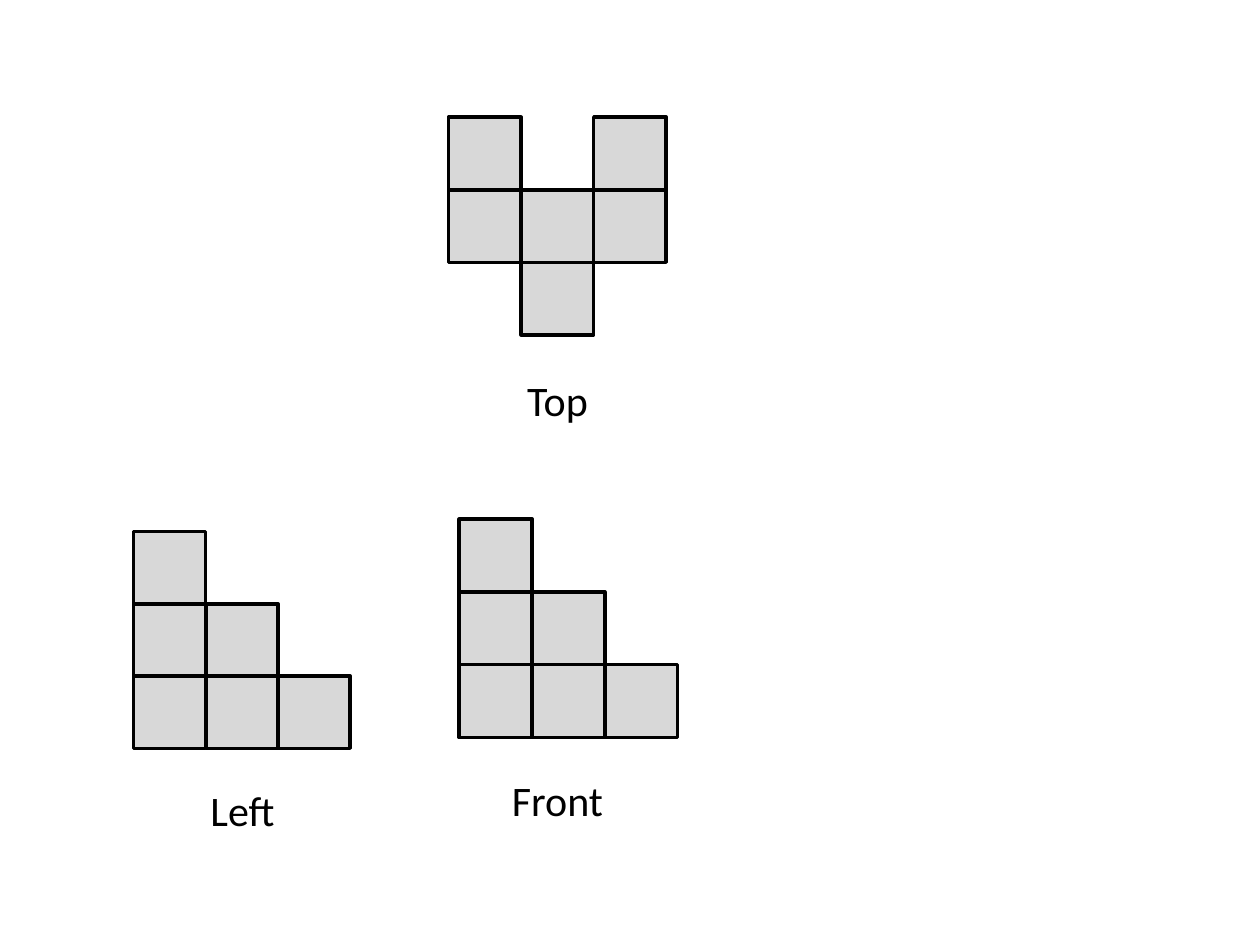
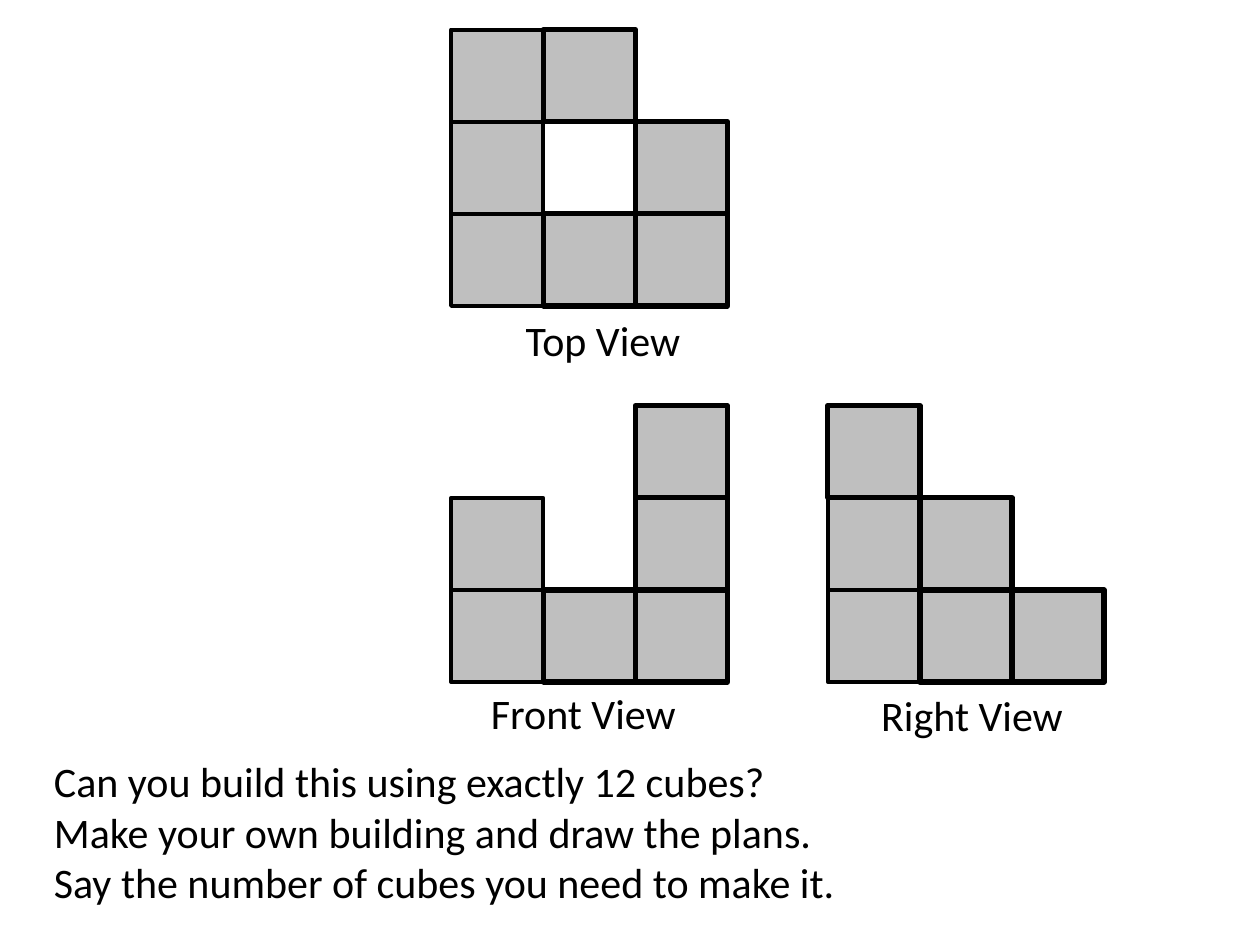
from dataclasses import dataclass

from pptx import Presentation
from pptx import util as u
from pptx.dml.color import RGBColor
from pptx.enum import shapes, text

COLUMNS, ROWS = 100, 75
BLANK_LAYOUT = 6


@dataclass(frozen=True)
class Theme:
    ink: str = "000000"
    pale_cube: str = "D8D8D8"
    grey_cube: str = "BFBFBF"
    font: str = "Calibri"
    size: float = 24
    fine: float = 2
    thin: float = 2.25
    thick: float = 3


class Plans:
    """Draws cube plans on a slide grid of COLUMNS by ROWS."""

    def __init__(self, theme):
        self.theme = theme
        self.deck = Presentation()
        self.deck.slide_width = u.Inches(10)
        self.deck.slide_height = u.Inches(7.5)
        # Pattern marks: cube outline widths
        self.outlines = {"f": theme.fine, "t": theme.thin, "T": theme.thick}

    def new_slide(self):
        layout = self.deck.slide_layouts[BLANK_LAYOUT]
        self.slide = self.deck.slides.add_slide(layout)

    def place(self, column, row, width, height):
        across = self.deck.slide_width / COLUMNS
        down = self.deck.slide_height / ROWS
        return [round(n) for n in
                (column * across, row * down, width * across, height * down)]

    def view(self, column, row, cube, pattern, colour):
        """Draw one square per pattern mark; a dot leaves a gap."""
        group = self.slide.shapes.add_group_shape()
        for down, marks in enumerate(pattern.split()):
            for across, mark in enumerate(marks):
                if mark == ".":
                    continue
                square = group.shapes.add_shape(
                    shapes.MSO_SHAPE.RECTANGLE,
                    *self.place(column + across * cube, row + down * cube,
                                cube, cube))
                square.shadow.inherit = False
                square.fill.solid()
                square.fill.fore_color.rgb = RGBColor.from_string(colour)
                square.line.color.rgb = RGBColor.from_string(self.theme.ink)
                square.line.width = u.Pt(self.outlines[mark])

    def words(self, column, row, width, height, *lines,
              align=text.PP_ALIGN.CENTER):
        frame = self.slide.shapes.add_textbox(
            *self.place(column, row, width, height)).text_frame
        frame.word_wrap = True
        frame.auto_size = text.MSO_AUTO_SIZE.SHAPE_TO_FIT_TEXT
        frame.text = "\n".join(lines)
        style = {"name": self.theme.font, "size": u.Pt(self.theme.size)}
        for paragraph in frame.paragraphs:
            paragraph.alignment = align
            for key, value in style.items():
                setattr(paragraph.font, key, value)
            paragraph.font.color.rgb = RGBColor.from_string(self.theme.ink)


def main():
    theme = Theme()
    plans = Plans(theme)

    plans.new_slide()
    small_views = [
        ("Front", 36.45, 41.2, 5.78, "f.. ff. fff", 35.6, 61),
        ("Top", 35.6, 9.3, 5.76, "f.f fff .f.", 35.6, 29.2),
        ("Left", 10.6, 42.2, 5.73, "f.. ff. fff", 10.6, 61.8),
    ]
    for name, column, row, cube, pattern, label_column, label_row in small_views:
        plans.view(column, row, cube, pattern, theme.pale_cube)
        plans.words(label_column, label_row, 17.3, 5, name)

    plans.new_slide()
    plans.words(3.3, 59.5, 90.6, 13.1,
                "Can you build this using exactly 12 cubes?",
                "Make your own building and draw the plans.",
                "Say the number of cubes you need to make it.",
                align=text.PP_ALIGN.LEFT)
    large_views = [
        ("Top View", 35.8, 2.35, "tT. t.T tTT", 40.2, 24.5, 15.3),
        ("Front View", 35.8, 32.2, "..T t.T tTT", 37.1, 54.1, 18.4),
        ("Right View", 65.7, 32.2, "T.. tT. tTT", 68.8, 54.2, 16.7),
    ]
    for name, column, row, pattern, label_column, label_row, width in large_views:
        plans.view(column, row, 7.31, pattern, theme.grey_cube)
        plans.words(label_column, label_row, width, 5, name)

    plans.deck.save("out.pptx")


if __name__ == "__main__":
    main()
